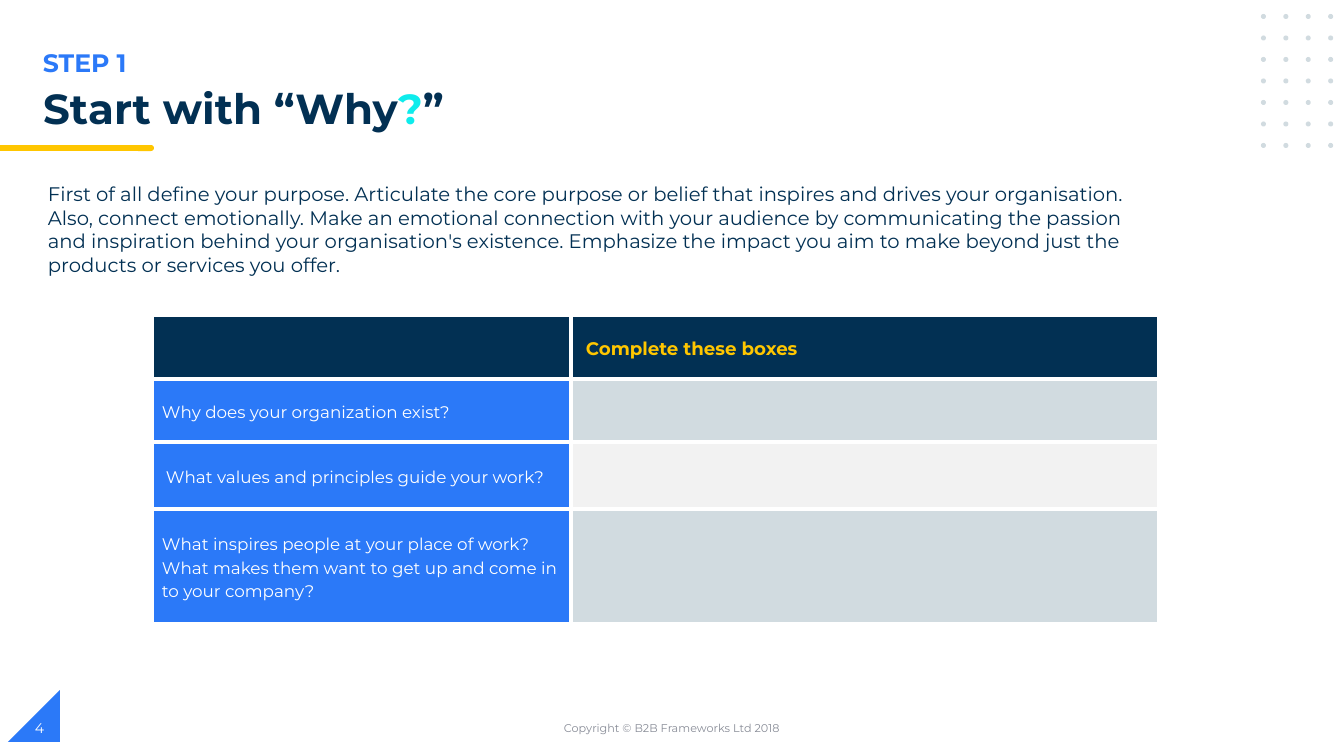
from lxml import etree
from pptx import Presentation
from pptx.dml.color import RGBColor
from pptx.enum.shapes import MSO_SHAPE as SHAPE
from pptx.enum.text import MSO_ANCHOR as ANCHOR, MSO_AUTO_SIZE as AUTO_SIZE, PP_ALIGN as ALIGN
from pptx.oxml.ns import qn
from pptx.util import Pt

COLORS = {"navy": "023053", "blue": "2B79F8", "cyan": "0EECEC", "gold": "FFC600",
          "mist": "D1DBE0", "pale": "F2F2F2", "grey": "888C97", "white": "FFFFFF"}
FONT = "Montserrat"

STEP = "STEP 1"
TITLE = [("Start with “Why", "navy"), ("?", "cyan"), ("”", "navy")]
INTRO = ("First of all define your purpose. Articulate the core purpose or belief that inspires "
         "and drives your organisation. Also, connect emotionally. Make an emotional connection "
         "with your audience by communicating the passion and inspiration behind your "
         "organisation's existence. Emphasize the impact you aim to make beyond just the "
         "products or services you offer.")
HEADER = "Complete these boxes"
# question, left margin in px, fill of the answer box
QUESTIONS = [
    ("Why does your organization exist?", 10, "mist"),
    ("What values and principles guide your work?", 14, "pale"),
    ("What inspires people at your place of work? What makes them want to get up and come in "
     "to your company?", 10, "mist"),
]
COPYRIGHT = "Copyright © B2B Frameworks Ltd 2018"
PAGE = "4"

COLUMN_WIDTHS = [419, 588]
ROW_HEIGHTS = [64, 63, 67, 115]
DOT_COLUMNS, DOT_ROWS = 4, 7


def px(length):
    return round(length * 914400 / 100.8)


def rgb(color):
    return RGBColor.from_string(COLORS[color])


def style(paragraph, size, color, bold=False):
    font = paragraph.font
    font.name, font.size, font.bold = FONT, Pt(size), bold
    font.color.rgb = rgb(color)


def add_plain_shape(kind, box, color):
    shape = slide.shapes.add_shape(kind, *map(px, box))
    shape.shadow.inherit = False
    shape.fill.solid()
    shape.fill.fore_color.rgb = rgb(color)
    shape.line.fill.background()
    return shape


def add_text(text, box, size, color, bold=False, anchor=ANCHOR.TOP, align=ALIGN.LEFT):
    frame = slide.shapes.add_textbox(*map(px, box)).text_frame
    frame.word_wrap = True
    frame.vertical_anchor = anchor
    paragraph = frame.paragraphs[0]
    paragraph.text = text
    paragraph.alignment = align
    style(paragraph, size, color, bold)


def fill_cell(cell, fill, text="", margin=10, size=12, color="white", bold=False):
    """Give a cell white borders, a fill and its text."""
    properties = cell._tc.get_or_add_tcPr()
    for side in ("a:lnL", "a:lnR", "a:lnT", "a:lnB"):
        line = etree.SubElement(properties, qn(side), w=str(Pt(3)))
        solid = etree.SubElement(line, qn("a:solidFill"))
        etree.SubElement(solid, qn("a:srgbClr"), val=COLORS["white"])
    cell.fill.solid()
    cell.fill.fore_color.rgb = rgb(fill)
    cell.vertical_anchor = ANCHOR.MIDDLE
    cell.margin_left, cell.margin_right = px(margin), px(10)
    cell.margin_top = cell.margin_bottom = 0
    paragraph = cell.text_frame.paragraphs[0]
    paragraph.text = text
    paragraph.line_spacing = 1.15
    style(paragraph, size, color, bold)


deck = Presentation()
deck.slide_width, deck.slide_height = px(1344), px(756)
slide = deck.slides.add_slide(deck.slide_layouts[5])

# Corner, underline and dot grid
corner = add_plain_shape(SHAPE.RIGHT_TRIANGLE, (8, 690, 52, 52), "blue")
corner.rotation = 270
add_plain_shape(SHAPE.FLOWCHART_TERMINATOR, (135, 145, 19, 6), "gold")
add_plain_shape(SHAPE.RECTANGLE, (0, 145, 142, 6), "gold")
for row in range(DOT_ROWS):
    for column in range(DOT_COLUMNS):
        add_plain_shape(SHAPE.OVAL, (1261 + 22.4 * column, 14 + 21.5 * row, 5, 5), "mist")

# Heading and introduction
add_text(STEP, (33, 42, 674, 40), 18, "blue", bold=True)
title = slide.shapes.title
title.left, title.top, title.width, title.height = map(px, (33, 83, 782, 40))
title.text_frame.auto_size = AUTO_SIZE.NONE
title.text_frame.vertical_anchor = ANCHOR.TOP
heading = title.text_frame.paragraphs[0]
heading.alignment = ALIGN.LEFT
heading.line_spacing = 0.9
style(heading, 30, "navy", bold=True)
for words, color in TITLE:
    run = heading.add_run()
    run.text = words
    run.font.color.rgb = rgb(color)
add_text(INTRO, (38, 177, 1133, 105), 14, "navy")

# Question table
table = slide.shapes.add_table(
    len(ROW_HEIGHTS), len(COLUMN_WIDTHS),
    *map(px, (152, 315, sum(COLUMN_WIDTHS), sum(ROW_HEIGHTS)))).table
for column, width in zip(table.columns, COLUMN_WIDTHS):
    column.width = px(width)
for row, height in zip(table.rows, ROW_HEIGHTS):
    row.height = px(height)
fill_cell(table.cell(0, 0), "navy")
fill_cell(table.cell(0, 1), "navy", HEADER, 15, 13, "gold", bold=True)
for index, (question, margin, answer_fill) in enumerate(QUESTIONS, 1):
    fill_cell(table.cell(index, 0), "blue", question, margin)
    fill_cell(table.cell(index, 1), answer_fill)

# Footer
add_text(COPYRIGHT, (445, 708, 454, 40), 8, "grey", anchor=ANCHOR.MIDDLE, align=ALIGN.CENTER)
add_text(PAGE, (25, 708, 302, 40), 10, "white", anchor=ANCHOR.MIDDLE)

deck.save("out.pptx")
